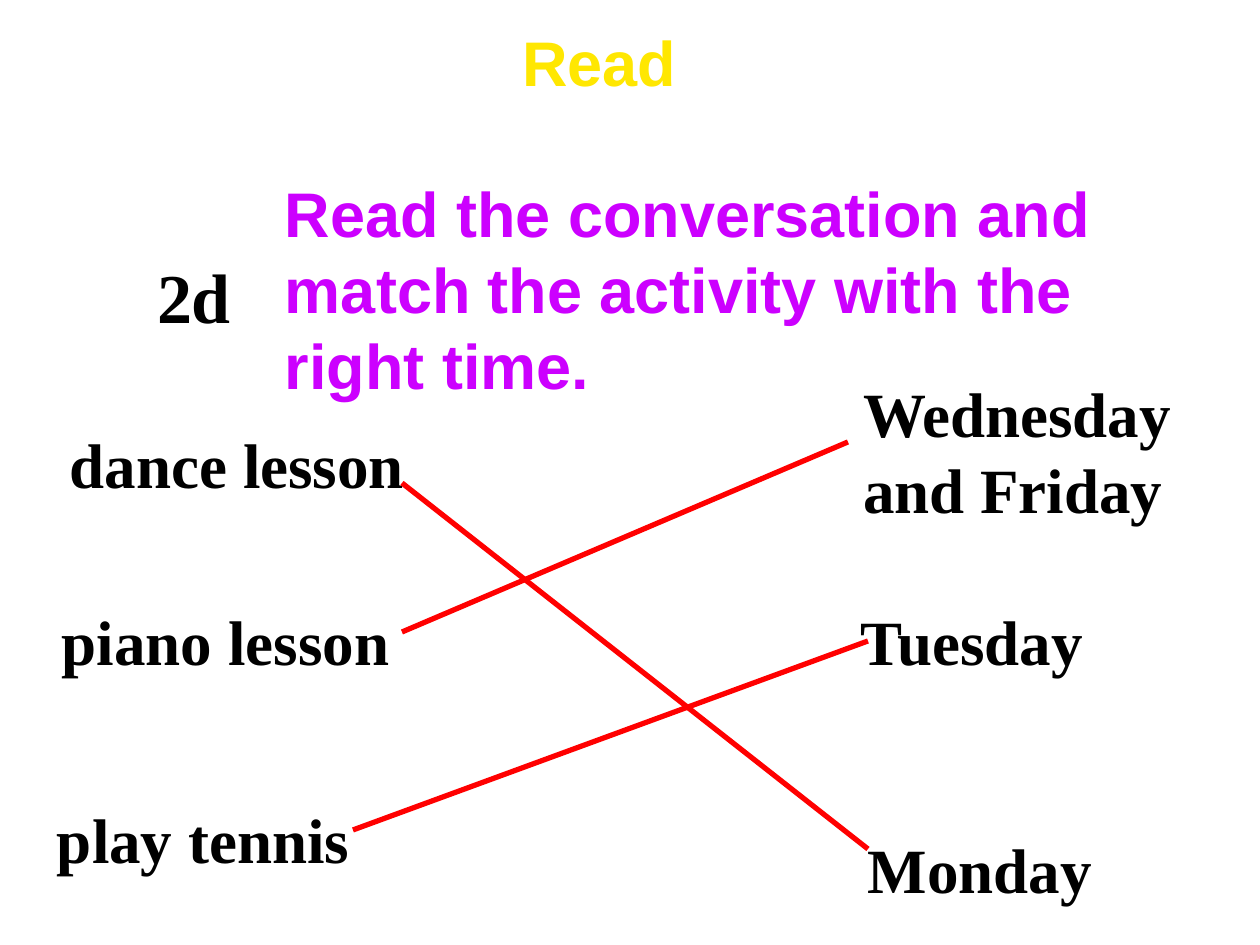
import pptx
import pptx.dml.color
import pptx.enum.shapes
import pptx.enum.text
import pptx.oxml
import pptx.util

SCALE = 914400 // 126  # EMU per px
ALIGN = pptx.enum.text.PP_ALIGN
ANCHOR = pptx.enum.text.MSO_ANCHOR
AUTO_SIZE = pptx.enum.text.MSO_AUTO_SIZE


def color(hex_value):
    return pptx.dml.color.RGBColor.from_string(hex_value)


def write_text(shape, text, font_name, size, hex_value, frame_format, alignment):
    frame = shape.text_frame
    insets = {"margin_left": 13 * SCALE, "margin_right": 13 * SCALE,
              "margin_top": 11 * SCALE, "margin_bottom": 2 * SCALE}
    for name, value in {**insets, **frame_format}.items():
        setattr(frame, name, value)
    paragraph = frame.paragraphs[0]
    paragraph.alignment = alignment
    paragraph.line_spacing = pptx.util.Pt(size * 1.2)
    run = paragraph.add_run()
    run.text = text
    font_format = {"name": font_name, "size": pptx.util.Pt(size), "bold": True}
    for name, value in font_format.items():
        setattr(run.font, name, value)
    run.font.color.rgb = color(hex_value)


presentation = pptx.Presentation()
presentation.slide_width = 1260 * SCALE
presentation.slide_height = 945 * SCALE
slide = presentation.slides.add_slide(presentation.slide_layouts[6])

wrapped = {"word_wrap": True, "auto_size": AUTO_SIZE.SHAPE_TO_FIT_TEXT}
unwrapped = {"word_wrap": False, "auto_size": AUTO_SIZE.NONE}

# Exercise number in an invisible oval
oval = slide.shapes.add_shape(
    pptx.enum.shapes.MSO_SHAPE.OVAL,
    *(length * SCALE for length in (144, 236, 100, 110)))
oval.shadow.inherit = False
oval.fill.background()
oval.line.fill.background()
write_text(oval, "2d", "Times New Roman", 40, "000000",
           {**unwrapped, "vertical_anchor": ANCHOR.MIDDLE}, ALIGN.CENTER)

# Instruction, activities and days
texts = [
    ("Read the conversation and match the activity with the right time.",
     "Arial", "CC00FF", (272, 164, 853, 239)),
]
labels = [
    ("dance lesson", (57, 415, 519, 88)),
    ("piano lesson", (49, 592, 441, 88)),
    ("play tennis", (44, 790, 408, 88)),
    ("Wednesday and Friday", (850, 364, 386, 164)),
    ("Tuesday", (848, 592, 334, 88)),
    ("Monday", (855, 820, 334, 88)),
]
texts += [(text, "Times New Roman", "000000", box) for text, box in labels]
for text, font_name, hex_value, box in texts:
    text_box = slide.shapes.add_textbox(*(length * SCALE for length in box))
    write_text(text_box, text, font_name, 36, hex_value, wrapped, ALIGN.LEFT)

# Matching lines from activity to day
matches = [
    (402, 632, 848, 442),
    (402, 483, 868, 849),
    (353, 830, 868, 641),
]
for ends in matches:
    line = slide.shapes.add_connector(
        pptx.enum.shapes.MSO_CONNECTOR.STRAIGHT,
        *(length * SCALE for length in ends))
    line.line.color.rgb = color("FF0000")
    line.line.width = pptx.util.Pt(3)
    properties = line._element.spPr
    properties.append(pptx.oxml.parse_xml(
        '<a:effectLst xmlns:a="http://schemas.openxmlformats.org/drawingml/2006/main"/>'))

# Title
title = slide.shapes.add_textbox(*(length * SCALE for length in (471, 13, 256, 112)))
write_text(title, "Read", "Arial", 36, "FFE701", unwrapped, ALIGN.CENTER)

presentation.save("out.pptx")
